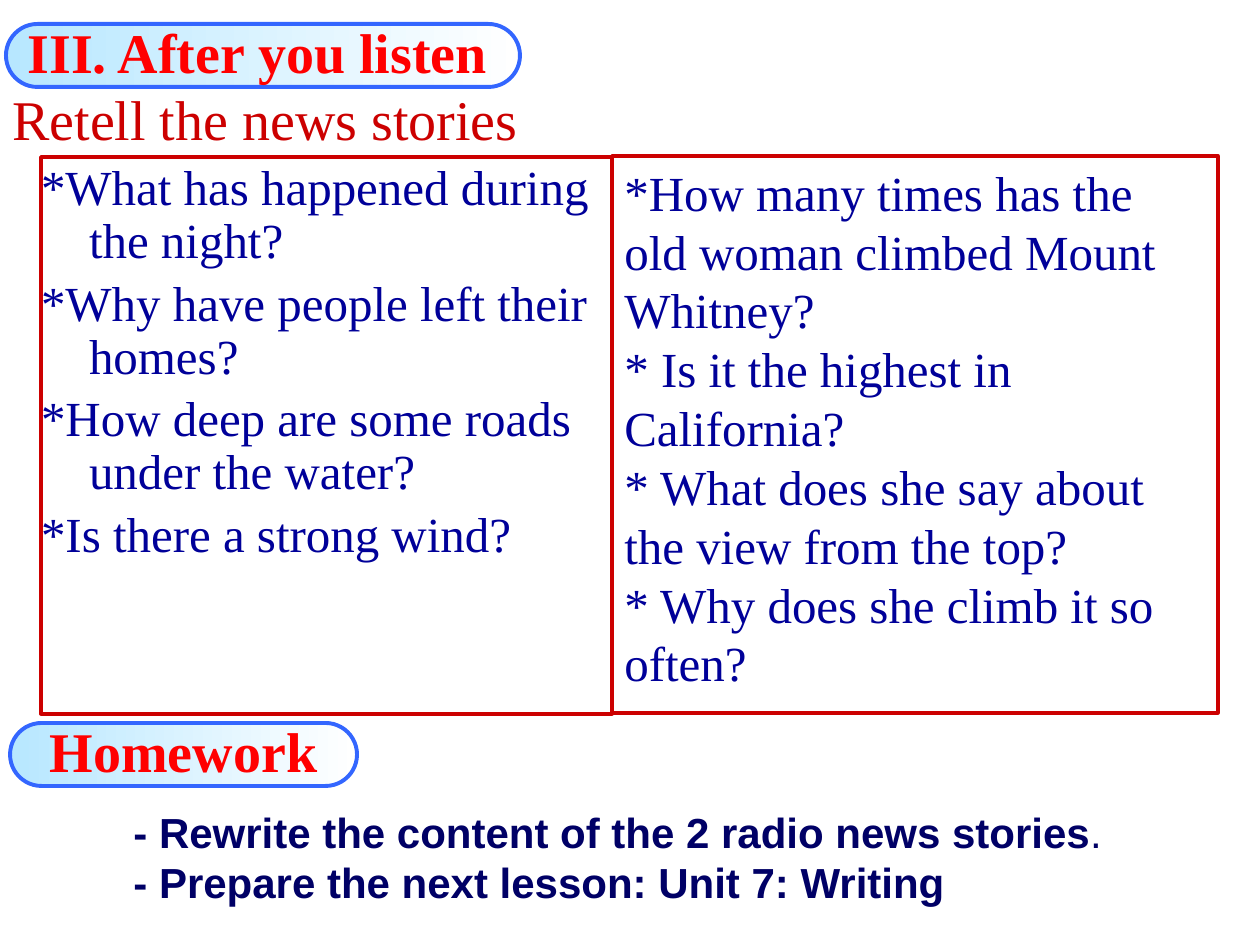
from lxml.etree import SubElement
from pptx import Presentation
from pptx.dml.color import RGBColor
from pptx.enum.shapes import MSO_SHAPE
from pptx.enum.text import MSO_ANCHOR, PP_ALIGN
from pptx.util import Inches, Pt

COLORS = {
    "heading": "FF0000",
    "red": "CC0000",
    "question": "000099",
    "homework": "000066",
    "pill_line": "3366FF",
    "pill_start": "B7E7FF",
    "pill_end": "FFFFFF",
}
SERIF = "Times New Roman"
NIGHT_QUESTIONS = [
    "*What has happened during the night?",
    "*Why have people left their homes?",
    "*How deep are some roads under the water?",
    "*Is there a strong wind?",
]
CLIMB_QUESTIONS = [
    "*How many times has the old woman climbed Mount Whitney?",
    "* Is it the highest in California?",
    "* What does she say about the view from the top?",
    "* Why does she climb it so often?",
]
HANGING = {"line_spacing": 0.9, "space_before": Pt(5.6)}


def px(length):
    return round(length * Inches(1) / 126)


def color(name):
    return RGBColor.from_string(COLORS[name])


def set_attributes(target, values):
    for name, value in values.items():
        setattr(target, name, value)


def write_text(shape, texts, font, formats=None, indent=0, frame=None):
    text_frame = shape.text_frame
    set_attributes(text_frame, {"word_wrap": True, "vertical_anchor": MSO_ANCHOR.TOP, **(frame or {})})
    for index, text in enumerate(texts):
        paragraph = text_frame.add_paragraph() if index else text_frame.paragraphs[0]
        set_attributes(paragraph, {"alignment": PP_ALIGN.LEFT, **(formats or {})})
        if indent:
            properties = paragraph._p.get_or_add_pPr()
            properties.set("marL", str(px(indent)))
            properties.set("indent", str(-px(indent)))
            SubElement(properties, "{http://schemas.openxmlformats.org/drawingml/2006/main}buNone")
        add_run(paragraph, text, font)


def add_run(paragraph, text, font):
    run = paragraph.add_run()
    run.text = text
    values = dict(font)
    run.font.color.rgb = color(values.pop("color"))
    set_attributes(run.font, values)


def add_outlined_shape(slide, kind, box, line_color, line_width):
    shape = slide.shapes.add_shape(kind, *map(px, box))
    shape.shadow.inherit = False
    shape.line.color.rgb = color(line_color)
    shape.line.width = Pt(line_width)
    return shape


def add_pill(slide, box, text, alignment):
    pill = add_outlined_shape(slide, MSO_SHAPE.ROUNDED_RECTANGLE, box, "pill_line", 2.25)
    pill.adjustments[0] = 0.5
    pill.fill.gradient()
    pill.fill.gradient_angle = 0
    for stop, name in zip(pill.fill.gradient_stops, ("pill_start", "pill_end")):
        stop.color.rgb = color(name)
    font = {"name": SERIF, "size": Pt(32), "bold": True, "color": "heading"}
    formats = {"alignment": alignment, "line_spacing": 0.9, "space_before": Pt(6.4)}
    write_text(pill, [text], font, formats, 23, {"vertical_anchor": MSO_ANCHOR.MIDDLE})


def add_subtitle(slide, box, text):
    subtitle = slide.shapes.add_textbox(*map(px, box))
    write_text(subtitle, [text], {"name": SERIF, "size": Pt(32), "color": "red"})


def add_question_box(slide, box, questions, formats=None, indent=0, frame=None):
    panel = add_outlined_shape(slide, MSO_SHAPE.RECTANGLE, box, "red", 2)
    panel.fill.background()
    font = {"name": SERIF, "size": Pt(28), "color": "question"}
    write_text(panel, questions, font, formats, indent, frame)


def add_questions(slide, box):
    left, top, width, height = box
    split = 571
    no_sides = {"margin_left": 0, "margin_right": 0}
    add_question_box(slide, (left, top + 1, split, height), NIGHT_QUESTIONS, HANGING, 48, no_sides)
    add_question_box(slide, (left + split, top, width - split, height), CLIMB_QUESTIONS)


def add_homework(slide, box):
    left, top, width, height = box
    add_pill(slide, (left, top, 347, 63), "Homework", PP_ALIGN.CENTER)
    tasks = slide.shapes.add_textbox(*map(px, (left + 111, top + 77, width - 111, height - 77)))
    font = {"name": "Arial", "size": Pt(24), "bold": True, "color": "homework"}
    texts = [
        "- Rewrite the content of the 2 radio news stories",
        "- Prepare the next lesson: Unit 7: Writing",
    ]
    write_text(tasks, texts, font, indent=63)
    add_run(tasks.text_frame.paragraphs[0], ".", {**font, "bold": False})


def main():
    presentation = Presentation()
    set_attributes(presentation, {"slide_width": px(1260), "slide_height": px(945)})
    slide = presentation.slides.add_slide(presentation.slide_layouts[6])
    add_subtitle(slide, (0, 78, 577, 79), "Retell the news stories")
    add_pill(slide, (6, 24, 514, 63), "III. After you listen", PP_ALIGN.LEFT)
    add_questions(slide, (41, 156, 1177, 557))
    add_homework(slide, (10, 723, 1111, 190))
    presentation.save("out.pptx")


if __name__ == "__main__":
    main()
